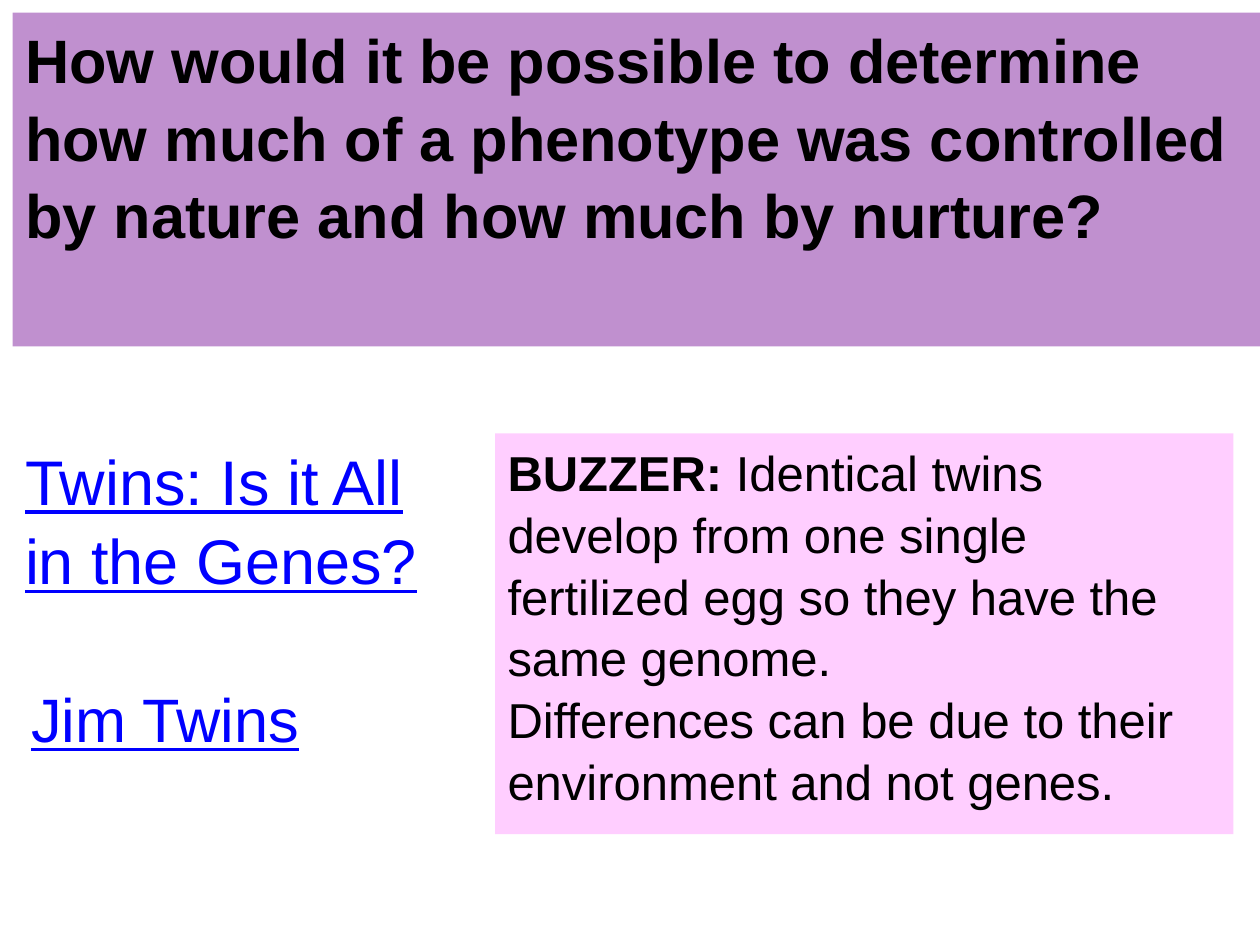
import pptx
import pptx.dml.color
import pptx.enum.text
import pptx.util

PX = 9144  # one px is 1/100 inch
COLORS = {"black": "000000", "link": "0000FF", "purple": "C090CF", "pink": "FFCEFF"}

QUESTION = ("How would it be possible to determine how much of a phenotype "
            "was controlled by nature and how much by nurture?")
QUESTION_PLACE = (10, 10, 990, 265)
# text, place (left, top, width, height), size
LINKS = [
    ("Twins: Is it All in the Genes?", (10, 343, 359, 146), 36),
    ("Jim Twins", (15, 533, 378, 40), 35),
]
# each paragraph is a list of (text, bold)
BUZZER = [
    [("BUZZER: ", True),
     ("Identical twins develop from one single fertilized egg "
      "so they have the same genome.", False)],
    [("Differences can be due to their environment and not genes.", False)],
]
BUZZER_PLACE = (393, 344, 586, 318)


def rgb(name):
    return pptx.dml.color.RGBColor.from_string(COLORS[name])


def write(box, paragraphs, size, color="black", underline=False):
    """Fill a box with paragraphs made of (text, bold) spans."""
    frame = box.text_frame
    frame.word_wrap = True
    frame.auto_size = pptx.enum.text.MSO_AUTO_SIZE.NONE
    frame.vertical_anchor = pptx.enum.text.MSO_ANCHOR.TOP
    for index, spans in enumerate(paragraphs):
        para = frame.add_paragraph() if index else frame.paragraphs[0]
        para.alignment = pptx.enum.text.PP_ALIGN.LEFT
        para.line_spacing = 1.05
        for text, bold in spans:
            span = para.add_run()
            span.text = text
            span.font.name = "Arial"
            span.font.size = pptx.util.Pt(size)
            span.font.bold = bold
            span.font.underline = underline
            span.font.color.rgb = rgb(color)


def paint(box, color):
    box.fill.solid()
    box.fill.fore_color.rgb = rgb(color)


def scaled(place):
    return [length * PX for length in place]


def main():
    deck = pptx.Presentation()
    deck.slide_width, deck.slide_height = scaled((1000, 750))
    page = deck.slides.add_slide(deck.slide_layouts[5])

    title = page.shapes.title
    title.left, title.top, title.width, title.height = scaled(QUESTION_PLACE)
    paint(title, "purple")
    write(title, [[(QUESTION, True)]], 35)

    for text, place, size in LINKS:
        box = page.shapes.add_textbox(*scaled(place))
        write(box, [[(text, False)]], size, "link", underline=True)

    buzzer = page.shapes.add_textbox(*scaled(BUZZER_PLACE))
    paint(buzzer, "pink")
    write(buzzer, BUZZER, 28)

    deck.save("out.pptx")


if __name__ == "__main__":
    main()
